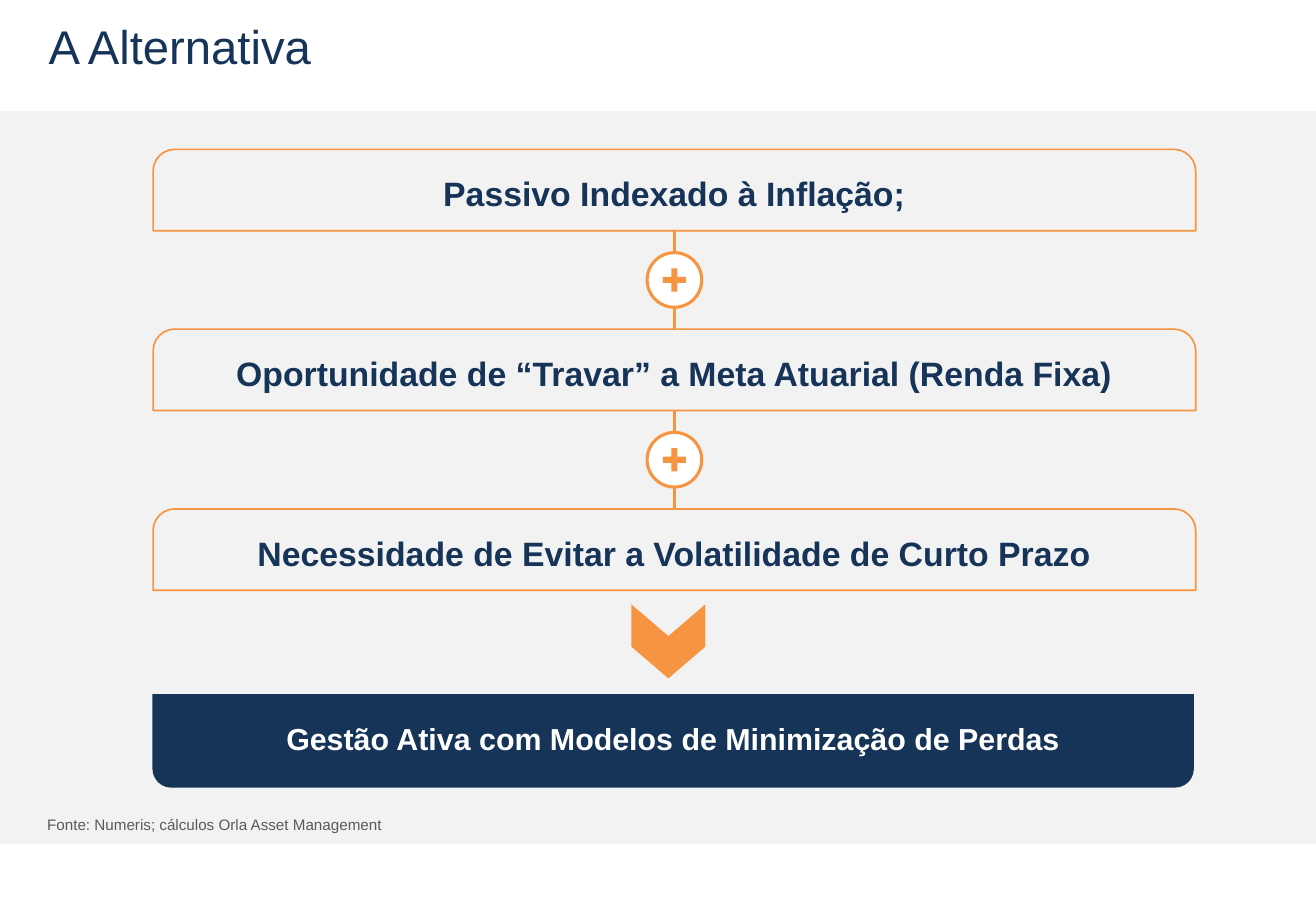
from lxml import etree
from pptx import Presentation
from pptx.dml.color import RGBColor
from pptx.enum.shapes import MSO_CONNECTOR, MSO_SHAPE
from pptx.enum.text import MSO_ANCHOR, MSO_AUTO_SIZE, PP_ALIGN
from pptx.oxml.ns import qn
from pptx.util import Inches, Pt

STRAIGHT = MSO_CONNECTOR.STRAIGHT
RECTANGLE = MSO_SHAPE.RECTANGLE
ROUNDED_PAIR = MSO_SHAPE.ROUND_2_SAME_RECTANGLE
OVAL, CROSS, CHEVRON = MSO_SHAPE.OVAL, MSO_SHAPE.CROSS, MSO_SHAPE.CHEVRON
TOP, MIDDLE = MSO_ANCHOR.TOP, MSO_ANCHOR.MIDDLE
LEFT, CENTER = PP_ALIGN.LEFT, PP_ALIGN.CENTER
NO_AUTOFIT = MSO_AUTO_SIZE.NONE

FONT = "Arial"
NAVY, ORANGE, WHITE, PANEL, GREY = "163358", "F79441", "FFFFFF", "F2F2F2", "5A5A5A"

# Grid in inches: one row per step, all centred on one axis
SLIDE_WIDTH, SLIDE_HEIGHT = 10.83, 7.5
AXIS = 5.55
STEP_TOP, STEP_PITCH = 1.23, 1.48
STEP_WIDTH, STEP_HEIGHT = 8.58, 0.67
GAP = STEP_PITCH - STEP_HEIGHT
BADGE, PLUS = 0.45, 0.19

STEPS = [
    "Passivo Indexado à Inflação;",
    "Oportunidade de “Travar” a Meta Atuarial (Renda Fixa)",
    "Necessidade de Evitar a Volatilidade de Curto Prazo",
]


def color(hex_text):
    return RGBColor.from_string(hex_text)


def write(shape, text, size, text_color, bold=False, align=CENTER, anchor=MIDDLE):
    frame = shape.text_frame
    frame.auto_size = NO_AUTOFIT
    frame.word_wrap = True
    frame.vertical_anchor = anchor
    paragraph = frame.paragraphs[0]
    paragraph.text = text
    paragraph.alignment = align
    font = paragraph.font
    font.name, font.size, font.bold = FONT, Pt(size), bold
    font.color.rgb = color(text_color)
    return paragraph


def add_shape(slide, kind, center_x, center_y, width, height, fill,
              line=None, line_width=1, adjustments=()):
    shape = slide.shapes.add_shape(
        kind, Inches(center_x - width / 2), Inches(center_y - height / 2),
        Inches(width), Inches(height))
    shape.shadow.inherit = False
    shape.fill.solid()
    shape.fill.fore_color.rgb = color(fill)
    if line:
        shape.line.color.rgb = color(line)
        shape.line.width = Pt(line_width)
    else:
        shape.line.fill.background()
    for index, value in enumerate(adjustments):
        shape.adjustments[index] = value
    return shape


def add_vertical_line(slide, top, bottom):
    connector = slide.shapes.add_connector(
        STRAIGHT, Inches(AXIS), Inches(top), Inches(AXIS), Inches(bottom))
    connector.line.color.rgb = color(ORANGE)
    connector.line.width = Pt(1.5)
    etree.SubElement(connector._element.spPr, qn("a:effectLst"))


def add_step(slide, top, text):
    box = add_shape(slide, ROUNDED_PAIR, AXIS, top + STEP_HEIGHT / 2,
                    STEP_WIDTH, STEP_HEIGHT, PANEL, ORANGE, 1, (0.266, 0))
    write(box, text, 20, NAVY, bold=True)


def add_plus_link(slide, top):
    center = top + GAP / 2
    add_vertical_line(slide, top, center - BADGE / 2)
    add_vertical_line(slide, center + BADGE / 2, top + GAP)
    add_shape(slide, OVAL, AXIS, center, BADGE, BADGE, WHITE, ORANGE, 1.8)
    add_shape(slide, CROSS, AXIS, center, PLUS, PLUS, ORANGE, adjustments=(0.37,))


def add_title(slide, text):
    title = slide.shapes.title
    title.left, title.top = Inches(0.3), Inches(0.14)
    title.width, title.height = Inches(9.45), Inches(0.86)
    paragraph = write(title, text, 28, NAVY, align=LEFT, anchor=TOP)
    paragraph.line_spacing = Pt(30)


def add_source(slide, text):
    box = slide.shapes.add_textbox(Inches(0.29), Inches(6.66), Inches(3.7), Inches(0.25))
    write(box, text, 9, GREY, align=LEFT, anchor=TOP)


def main():
    presentation = Presentation()
    presentation.slide_width = Inches(SLIDE_WIDTH)
    presentation.slide_height = Inches(SLIDE_HEIGHT)
    slide = presentation.slides.add_slide(presentation.slide_layouts[5])

    # Background panel and title
    add_shape(slide, RECTANGLE, SLIDE_WIDTH / 2, 3.93, SLIDE_WIDTH, 6.02,
              PANEL, PANEL, 0.75)
    add_title(slide, "A Alternativa")

    # Steps joined by plus signs
    for row, text in enumerate(STEPS):
        top = STEP_TOP + row * STEP_PITCH
        add_step(slide, top, text)
        if row:
            add_plus_link(slide, top - GAP)

    # Conclusion
    arrow = add_shape(slide, CHEVRON, 5.5, 5.28, 0.61, 0.61, ORANGE,
                      adjustments=(0.429,))
    arrow.rotation = 90
    conclusion = add_shape(slide, ROUNDED_PAIR, 5.54, 6.1, 8.57, 0.77, NAVY,
                           adjustments=(0, 0.201))
    write(conclusion, "Gestão Ativa com Modelos de Minimização de Perdas",
          18, WHITE, bold=True)

    # Source note
    add_source(slide, "Fonte: Numeris; cálculos Orla Asset Management")

    presentation.save("out.pptx")


if __name__ == "__main__":
    main()
